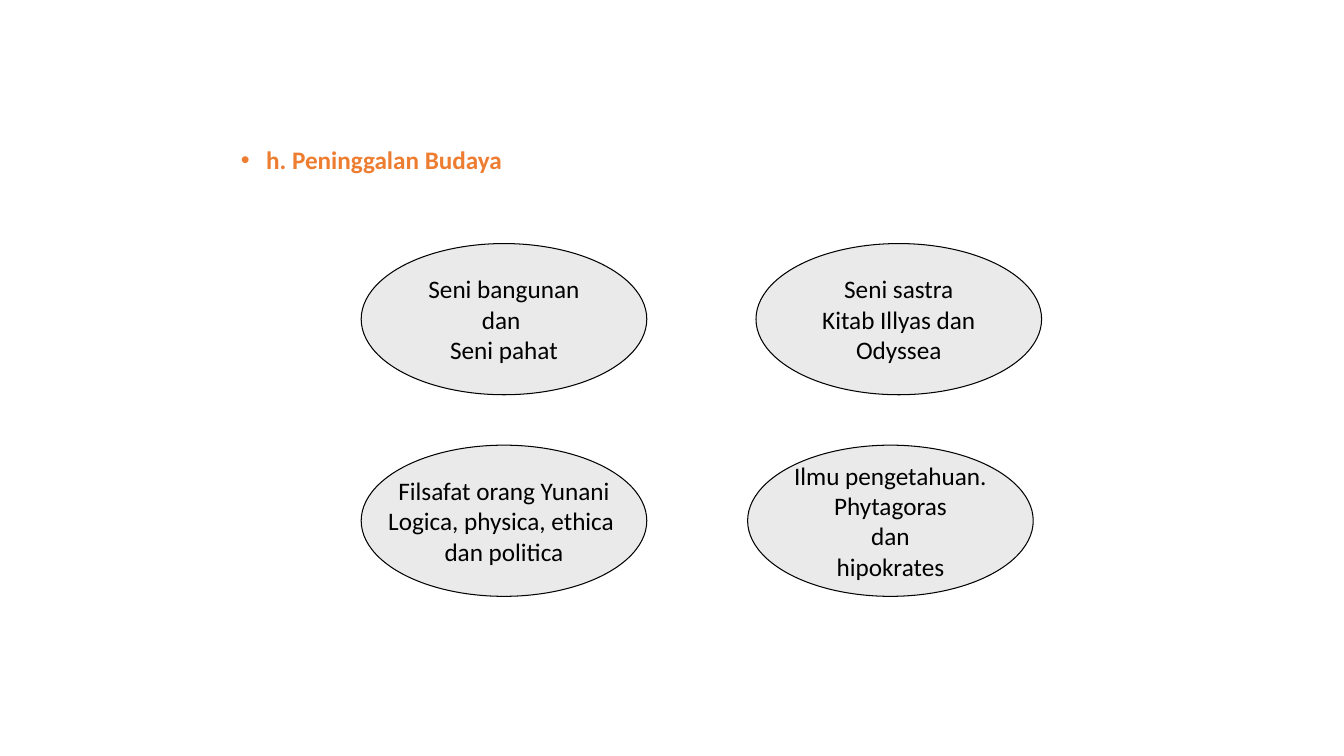
import pptx
import pptx.dml.color
import pptx.enum.shapes
import pptx.enum.text
import pptx.util
from lxml import etree

ORANGE = pptx.dml.color.RGBColor(0xED, 0x7D, 0x31)
PALE_GRAY = pptx.dml.color.RGBColor(0xEA, 0xEA, 0xEA)
BLACK = pptx.dml.color.RGBColor(0x00, 0x00, 0x00)

COLUMNS, ROWS = 160, 90
OVAL_COLUMNS, OVAL_ROWS = 34, 18

# Left column and top row of each oval, then its lines
HERITAGE = [
    (43, 29, ["Seni bangunan", "dan ", "Seni pahat"]),
    (43, 53, ["Filsafat orang Yunani", "Logica, physica, ethica ", "dan politica"]),
    (90, 29, ["Seni sastra", "Kitab Illyas dan", "Odyssea"]),
    (89, 53, ["Ilmu pengetahuan.", "Phytagoras", "dan", "hipokrates"]),
]


class SlideBuilder:
    font_name = "Calibri"
    font_size = pptx.util.Pt(18)

    def __init__(self, presentation):
        self.slide = presentation.slides.add_slide(presentation.slide_layouts[6])
        self.column = presentation.slide_width / COLUMNS
        self.row = presentation.slide_height / ROWS

    def box(self, left, top, width, height):
        """Turn grid columns and rows into slide lengths."""
        return (round(left * self.column), round(top * self.row),
                round(width * self.column), round(height * self.row))

    def add_run(self, paragraph, text, color, bold=False):
        run = paragraph.add_run()
        run.text = text
        run.font.name = self.font_name
        run.font.size = self.font_size
        run.font.bold = bold
        run.font.color.rgb = color

    def bullet_heading(self, text, left, top, width, height):
        shape = self.slide.shapes.add_textbox(*self.box(left, top, width, height))
        shape.text_frame.word_wrap = True
        paragraph = shape.text_frame.paragraphs[0]
        paragraph.line_spacing = 0.9
        properties = paragraph._p.get_or_add_pPr()
        indent = pptx.util.Inches(0.25)
        properties.set("marL", str(indent))
        properties.set("indent", str(-indent))
        namespace = pptx.oxml.ns.qn
        etree.SubElement(properties, namespace("a:buFont"), typeface="Arial")
        etree.SubElement(properties, namespace("a:buChar"), char="•")
        self.add_run(paragraph, text, ORANGE, bold=True)

    def oval(self, lines, left, top):
        shape = self.slide.shapes.add_shape(
            pptx.enum.shapes.MSO_SHAPE.OVAL,
            *self.box(left, top, OVAL_COLUMNS, OVAL_ROWS))
        shape.shadow.inherit = False
        shape.fill.solid()
        shape.fill.fore_color.rgb = PALE_GRAY
        shape.line.color.rgb = BLACK
        shape.line.width = pptx.util.Pt(0.75)
        frame = shape.text_frame
        frame.word_wrap = False
        frame.vertical_anchor = pptx.enum.text.MSO_ANCHOR.MIDDLE
        for index, line in enumerate(lines):
            paragraph = frame.add_paragraph() if index else frame.paragraphs[0]
            paragraph.alignment = pptx.enum.text.PP_ALIGN.CENTER
            self.add_run(paragraph, line, BLACK)


def main():
    presentation = pptx.Presentation()
    presentation.slide_width = pptx.util.Inches(13.33)
    presentation.slide_height = pptx.util.Inches(7.5)
    builder = SlideBuilder(presentation)
    builder.bullet_heading("h. Peninggalan Budaya", 27.5, 17, 105, 5)
    for left, top, lines in HERITAGE:
        builder.oval(lines, left, top)
    presentation.save("out.pptx")


if __name__ == "__main__":
    main()
